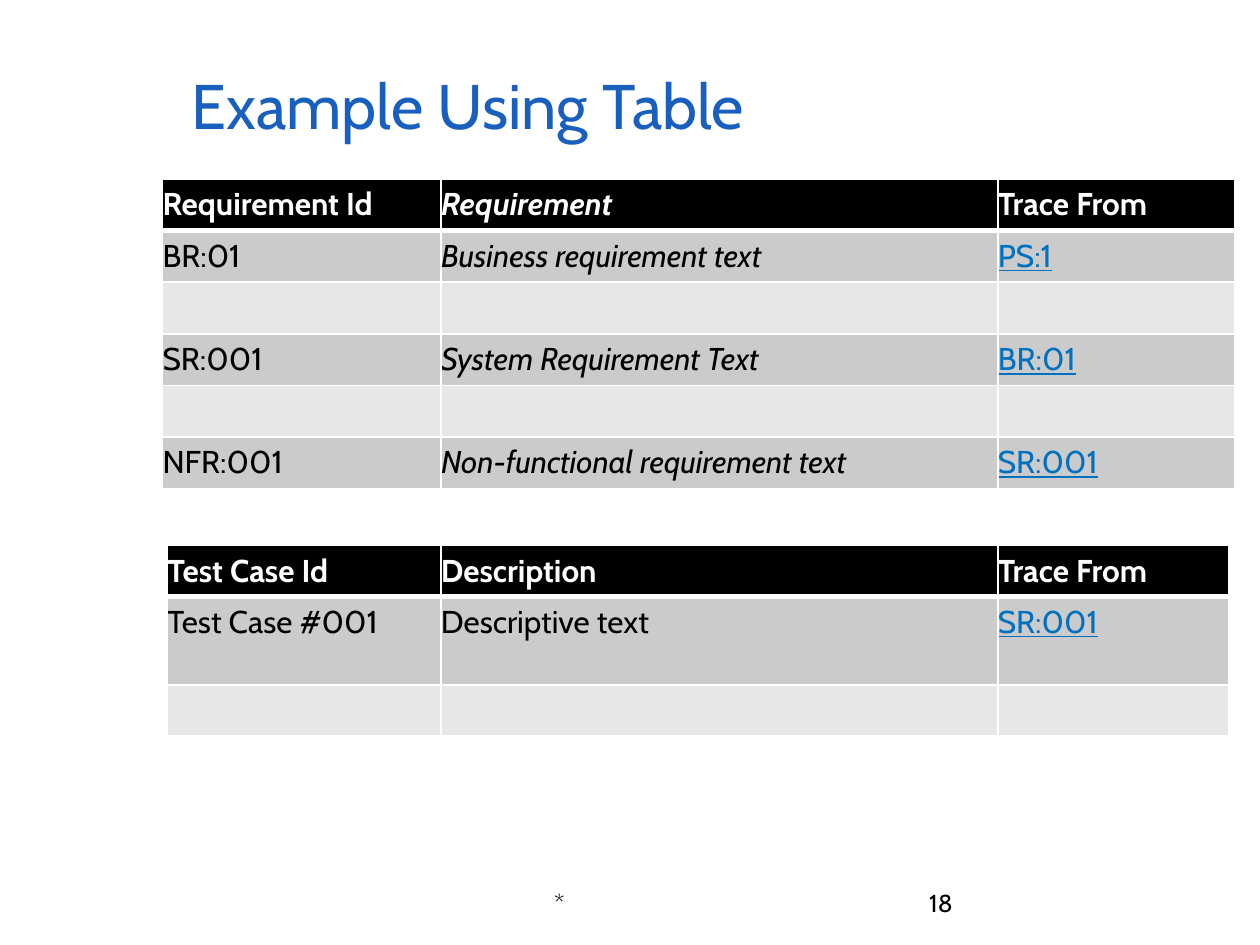
import pptx
import pptx.util
import pptx.dml.color
import pptx.enum.text
import pptx.oxml
import pptx.oxml.ns

Inches, Pt = pptx.util.Inches, pptx.util.Pt
ALIGN, ANCHOR = pptx.enum.text.PP_ALIGN, pptx.enum.text.MSO_ANCHOR


def color(hex_code):
    return pptx.dml.color.RGBColor.from_string(hex_code)


def write(tf, text, size=18, fill="000000", bold=False, italic=False,
          underline=False, align=ALIGN.LEFT):
    p = tf.paragraphs[0]
    p.alignment = align
    r = p.add_run()
    r.text = text
    r.font.name, r.font.size = "Cabin", Pt(size)
    r.font.bold, r.font.italic, r.font.underline = bold, italic, underline
    r.font.color.rgb = color(fill)


prs = pptx.Presentation()
prs.slide_width, prs.slide_height = Inches(10), Inches(7.5)
s = prs.slides.add_slide(prs.slide_layouts[5])

title = s.shapes.title
title.left, title.top = Inches(1.42), Inches(0.33)
title.width, title.height = Inches(8.36), Inches(0.85)
title.text_frame.vertical_anchor = ANCHOR.BOTTOM
write(title.text_frame, "Example Using Table", size=36, fill="195FBE")

# left, top, column widths, row heights, italic middle column, rows of text
tables = [
    (1.29, 1.42, [2.21, 4.42, 1.88], [0.41] * 6, True, [
        ["Requirement Id", "Requirement", "Trace From"],
        ["BR:01", "Business requirement text", "PS:1"],
        ["", "", ""],
        ["SR:001", "System Requirement Text", "BR:01"],
        ["", "", ""],
        ["NFR:001", "Non-functional requirement text", "SR:001"],
    ]),
    (1.33, 4.33, [2.17, 4.42, 1.83], [0.4, 0.7, 0.4], False, [
        ["Test Case Id", "Description", "Trace From"],
        ["Test Case #001", "Descriptive text", "SR:001"],
        ["", "", ""],
    ]),
]
for left, top, widths, heights, italic_middle, rows in tables:
    table = s.shapes.add_table(
        len(rows), len(widths), Inches(left), Inches(top),
        Inches(sum(widths)), Inches(sum(heights))).table
    for column, width in zip(table.columns, widths):
        column.width = Inches(width)
    for i, texts in enumerate(rows):
        table.rows[i].height = Inches(heights[i])
        for j, text in enumerate(texts):
            cell = table.cell(i, j)
            cell.margin_left = cell.margin_right = 0
            cell.margin_top = cell.margin_bottom = Inches(0.05)
            cell.fill.solid()
            band = "CBCBCB" if i % 2 else "E7E7E7"
            cell.fill.fore_color.rgb = color("000000" if i == 0 else band)
            if text:
                is_link = i > 0 and j == 2
                body_color = "0070C0" if is_link else "000000"
                write(cell.text_frame, text, bold=i == 0, underline=is_link,
                      italic=italic_middle and j == 1,
                      fill="FFFFFF" if i == 0 else body_color)
            # The rule under the header row is thicker than the other borders
            thick_side = {0: "B", 1: "T"}.get(i)
            tc_pr = cell._tc.get_or_add_tcPr()
            for k, side in enumerate("LRTB"):
                width = Pt(3 if side == thick_side else 1)
                tc_pr.insert(k, pptx.oxml.parse_xml(
                    f'<a:ln{side} {pptx.oxml.ns.nsdecls("a")} w="{width}">'
                    '<a:solidFill><a:srgbClr val="FFFFFF"/></a:solidFill>'
                    f'</a:ln{side}>'))

for left, width, text, align in [(4.3, 1.92, "*", ALIGN.LEFT),
                                 (6.38, 1.28, "18", ALIGN.RIGHT)]:
    tf = s.shapes.add_textbox(Inches(left), Inches(6.83),
                              Inches(width), Inches(0.5)).text_frame
    tf.word_wrap = True
    tf.vertical_anchor = ANCHOR.BOTTOM
    write(tf, text, size=14, align=align)

prs.save("out.pptx")
